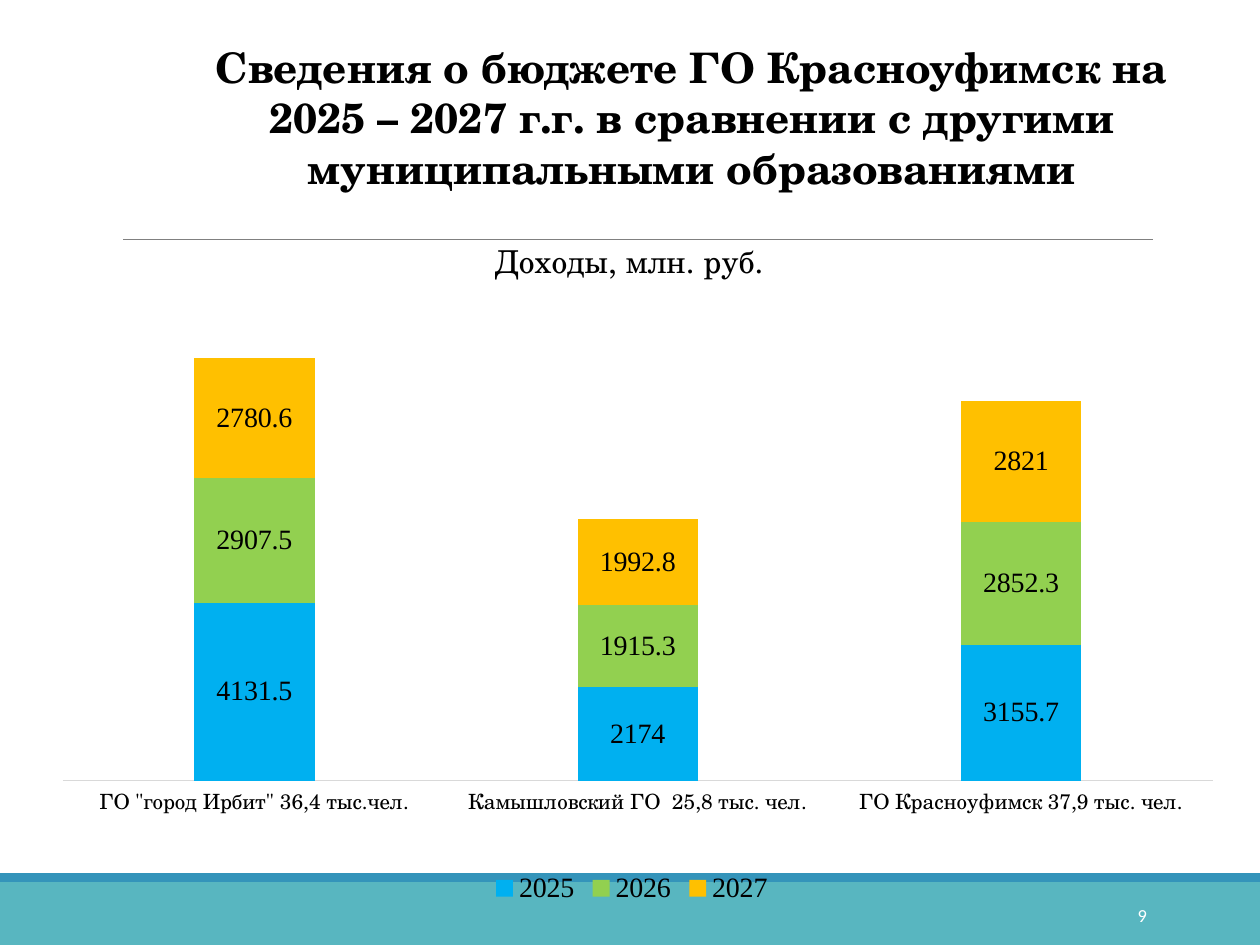
import pptx
import pptx.chart.data
import pptx.dml.color
import pptx.enum.chart
import pptx.enum.shapes
import pptx.enum.text
import pptx.oxml
import pptx.oxml.ns
import pptx.util
from pptx.util import Inches, Pt

SERIF = "TeX Gyre Schola"
NUMBERS = "Times New Roman"


def paint(color_format, color):
    color_format.rgb = pptx.dml.color.RGBColor.from_string(color)


def write(text_frame, text, font="Calibri", size=12, color="000000", bold=False,
          align="CENTER", anchor="TOP"):
    """Fill a text frame with one formatted paragraph."""
    text_frame.word_wrap = True
    text_frame.vertical_anchor = getattr(pptx.enum.text.MSO_ANCHOR, anchor)
    paragraph = text_frame.paragraphs[0]
    paragraph.alignment = getattr(pptx.enum.text.PP_ALIGN, align)
    run = paragraph.add_run()
    run.text = text
    run.font.name, run.font.size, run.font.bold = font, Pt(size), bold
    paint(run.font.color, color)


presentation = pptx.Presentation()
presentation.slide_width = Inches(10)
presentation.slide_height = Inches(7.5)
slide = presentation.slides.add_slide(presentation.slide_layouts[5])

# Rule and footer bands
rule = slide.shapes.add_connector(
    pptx.enum.shapes.MSO_CONNECTOR.STRAIGHT,
    Inches(0.98), Inches(1.9), Inches(9.15), Inches(1.9))
paint(rule.line.color, "808080")
rule.line.width = Pt(0.5)
rule._element.spPr.append(pptx.oxml.parse_xml(
    f'<a:effectLst {pptx.oxml.ns.nsdecls("a")}/>'))

for top, height, color in [(7, 0.5, "58B6C0"), (6.93, 0.07, "3494BA")]:
    band = slide.shapes.add_shape(
        pptx.enum.shapes.MSO_SHAPE.RECTANGLE,
        0, Inches(top), presentation.slide_width, Inches(height))
    band.shadow.inherit = False
    band.fill.solid()
    paint(band.fill.fore_color, color)
    band.line.fill.background()

# Title
title = slide.shapes.title
title.left, title.top = Inches(1.54), Inches(0.28)
title.width, title.height = Inches(7.9), Inches(1.31)
title.text_frame.auto_size = pptx.enum.text.MSO_AUTO_SIZE.NONE
write(title.text_frame,
      "Сведения о бюджете ГО Красноуфимск на 2025 – 2027 г.г. "
      "в сравнении с другими муниципальными образованиями",
      font=SERIF, size=24, bold=True)

# Revenue chart
revenue = {
    "2025": ("00B0F0", [4131.5, 2174, 3155.7]),
    "2026": ("92D050", [2907.5, 1915.3, 2852.3]),
    "2027": ("FFC000", [2780.6, 1992.8, 2821]),
}
chart_data = pptx.chart.data.CategoryChartData()
chart_data.categories = [
    'ГО "город Ирбит" 36,4 тыс.чел.',
    "Камышловский ГО  25,8 тыс. чел.",
    "ГО Красноуфимск 37,9 тыс. чел.",
]
for year, (color, values) in revenue.items():
    chart_data.add_series(year, values)
chart = slide.shapes.add_chart(
    pptx.enum.chart.XL_CHART_TYPE.COLUMN_STACKED,
    Inches(0.31), Inches(1.53), Inches(9.41), Inches(5.69), chart_data).chart
chart.font.name, chart.font.size = SERIF, Pt(10)
paint(chart.font.color, "000000")

chart.has_title = True
write(chart.chart_title.text_frame, "Доходы, млн. руб.", font=SERIF, size=18)

chart.has_legend = True
chart.legend.position = pptx.enum.chart.XL_LEGEND_POSITION.BOTTOM
chart.legend.include_in_layout = False
chart.legend.font.name, chart.legend.font.size = NUMBERS, Pt(16)
paint(chart.legend.font.color, "000000")

category_axis = chart.category_axis
category_axis.major_tick_mark = pptx.enum.chart.XL_TICK_MARK.NONE
category_axis.tick_labels.font.name = SERIF
category_axis.tick_labels.font.size = Pt(12)
paint(category_axis.tick_labels.font.color, "000000")
paint(category_axis.format.line.color, "D9D9D9")
category_axis.format.line.width = Pt(0.75)

value_axis = chart.value_axis
value_axis.visible = False
value_axis.has_major_gridlines = False
value_axis.minimum_scale, value_axis.maximum_scale = 0, 12000

plot = chart.plots[0]
plot.gap_width, plot.overlap = 219, 100
plot.vary_by_categories = False
for series, (color, values) in zip(plot.series, revenue.values()):
    series.format.fill.solid()
    paint(series.format.fill.fore_color, color)
    labels = series.data_labels
    labels.show_value = True
    labels.position = pptx.enum.chart.XL_LABEL_POSITION.CENTER
    labels.font.name, labels.font.size = NUMBERS, Pt(16)
    paint(labels.font.color, "000000")

# Manual places of the chart title and the plot, as shares of the chart
chart_element = chart._chartSpace.chart
layouts = [
    (chart_element.find(pptx.oxml.ns.qn("c:title")), 1, "",
     {"x": 0.38, "y": 0.05}),
    (chart_element.plotArea, 0, '<c:layoutTarget val="inner"/>',
     {"x": 0.02, "y": 0.1, "w": 0.97, "h": 0.72}),
]
for parent, index, target, shares in layouts:
    for old_layout in parent.findall(pptx.oxml.ns.qn("c:layout")):
        parent.remove(old_layout)
    modes = "".join(f'<c:{key}Mode val="edge"/>' for key in "xy")
    places = "".join(f'<c:{key} val="{share}"/>' for key, share in shares.items())
    parent.insert(index, pptx.oxml.parse_xml(
        f'<c:layout {pptx.oxml.ns.nsdecls("c")}><c:manualLayout>'
        f'{target}{modes}{places}</c:manualLayout></c:layout>'))

# Page number
page_number = slide.shapes.add_textbox(
    Inches(8.12), Inches(7.06), Inches(1.08), Inches(0.4))
write(page_number.text_frame, "9", size=10.5, color="FFFFFF",
      align="RIGHT", anchor="MIDDLE")

presentation.save("out.pptx")
